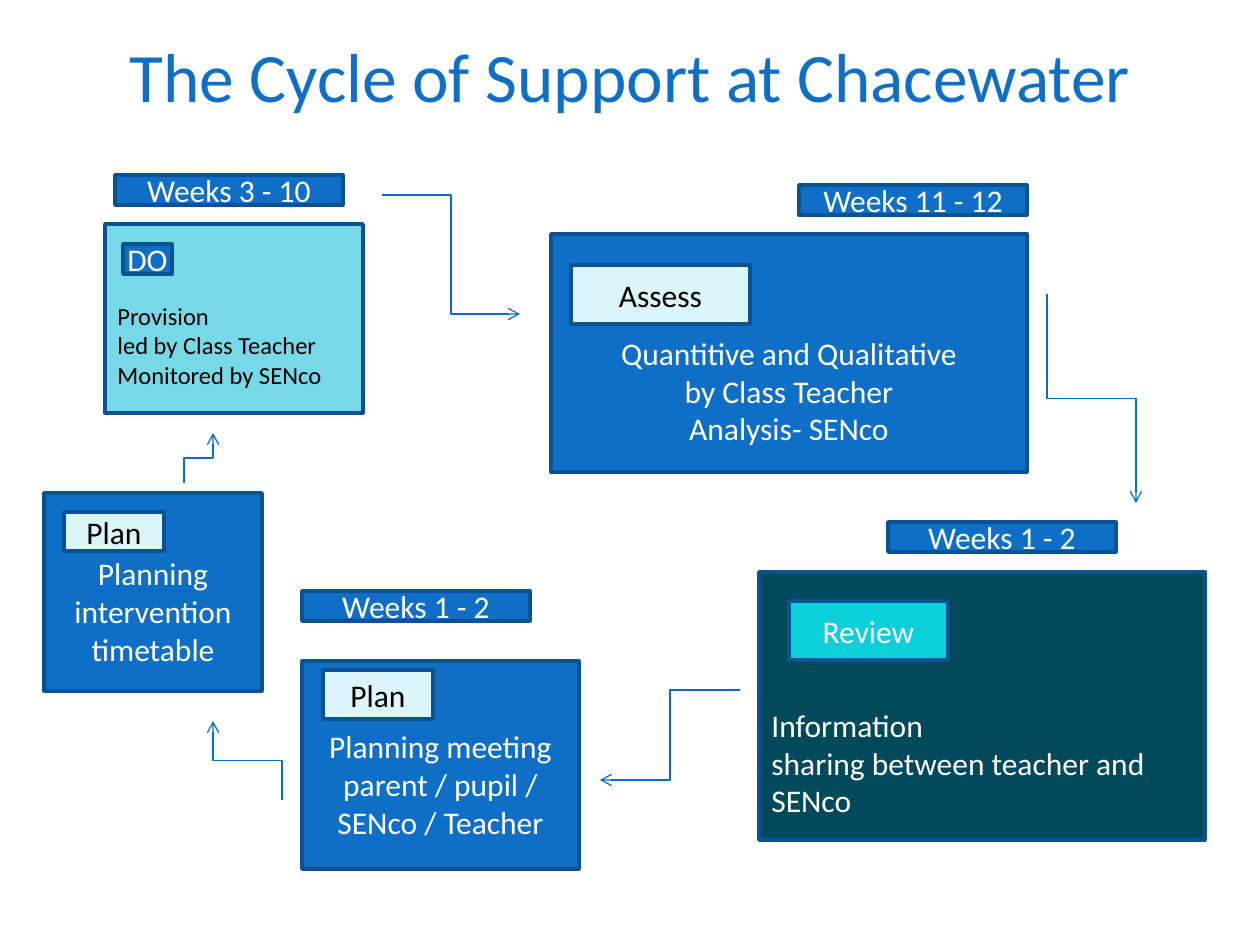
"""Build the Cycle of Support slide: cards, week labels and elbow arrows."""
from dataclasses import dataclass

from lxml import etree
from pptx import Presentation
from pptx.dml.color import RGBColor
from pptx.enum.shapes import MSO_CONNECTOR, MSO_SHAPE
from pptx.enum.text import MSO_ANCHOR, MSO_AUTO_SIZE, PP_ALIGN
from pptx.oxml.ns import qn
from pptx.util import Emu, Pt

RECTANGLE, ELBOW = MSO_SHAPE.RECTANGLE, MSO_CONNECTOR.ELBOW
LEFT, CENTER = PP_ALIGN.LEFT, PP_ALIGN.CENTER
TOP, MIDDLE = MSO_ANCHOR.TOP, MSO_ANCHOR.MIDDLE
NO_FIT = MSO_AUTO_SIZE.NONE
PX_PER_INCH = 126


@dataclass(frozen=True)
class Theme:
    """Colours, type sizes and line widths of the slide."""
    font: str = "Calibri"
    blue: str = "0F6FC6"
    edge: str = "0B5292"
    arrow: str = "0A6DC6"
    aqua: str = "77D9E8"
    pale: str = "DBF5F9"
    teal: str = "03495C"
    cyan: str = "0BD0D9"
    white: str = "FFFFFF"
    black: str = "000000"
    title_size: float = 39.6
    text_size: float = 18
    small_size: float = 14
    edge_width: float = 2
    arrow_width: float = 0.75


THEME = Theme()


@dataclass(frozen=True)
class Area:
    """A rectangle in px."""
    left: int
    top: int
    width: int
    height: int


@dataclass(frozen=True)
class Words:
    """Paragraphs with their formatting; top and bottom are insets in px."""
    paragraphs: tuple[str, ...]
    color: str = THEME.white
    size: float = THEME.text_size
    align: PP_ALIGN = CENTER
    anchor: MSO_ANCHOR = MIDDLE
    top: int = 6
    bottom: int = 6


@dataclass(frozen=True)
class Box:
    """A bordered rectangle with optional words."""
    area: Area
    fill: str = THEME.blue
    words: Words | None = None


@dataclass(frozen=True)
class Arrow:
    """An elbow arrow; a turn of 90 or 270 makes it leave vertically."""
    start: tuple[int, int]
    end: tuple[int, int]
    turn: int = 0


def px(length: float) -> Emu:
    """Turn px into EMU."""
    return Emu(round(length * 914400 / PX_PER_INCH))


def rgb(color: str) -> RGBColor:
    """Turn a hex string into a colour."""
    return RGBColor.from_string(color)


def place(shape, area: Area) -> None:
    """Move and size a shape."""
    shape.left, shape.top = px(area.left), px(area.top)
    shape.width, shape.height = px(area.width), px(area.height)


def write(shape, words: Words) -> None:
    """Fill a text frame run by run."""
    frame = shape.text_frame
    frame.word_wrap, frame.auto_size = True, NO_FIT
    frame.vertical_anchor = words.anchor
    frame.margin_top, frame.margin_bottom = px(words.top), px(words.bottom)
    for index, text in enumerate(words.paragraphs):
        para = frame.add_paragraph() if index else frame.paragraphs[0]
        para.alignment = words.align
        for number, line in enumerate(text.split("\n")):
            if number:
                para.add_line_break()
            span = para.add_run()
            span.text = line
            span.font.name, span.font.size = THEME.font, Pt(words.size)
            span.font.color.rgb = rgb(words.color)


def draw_box(slide, box: Box) -> None:
    """Draw a bordered rectangle."""
    shape = slide.shapes.add_shape(RECTANGLE, 0, 0, 0, 0)
    place(shape, box.area)
    shape.shadow.inherit = False
    shape.fill.solid()
    shape.fill.fore_color.rgb = rgb(box.fill)
    shape.line.color.rgb = rgb(THEME.edge)
    shape.line.width = Pt(THEME.edge_width)
    if box.words:
        write(shape, box.words)


def draw_text(slide, area: Area, words: Words) -> None:
    """Draw a plain text box."""
    shape = slide.shapes.add_textbox(0, 0, 0, 0)
    place(shape, area)
    write(shape, words)


def draw_arrow(slide, arrow: Arrow) -> None:
    """Draw an elbow arrow, turning its frame about its centre if needed."""
    (x1, y1), (x2, y2) = arrow.start, arrow.end
    if arrow.turn:
        sign = 1 if arrow.turn == 90 else -1
        mid_x, mid_y = (x1 + x2) / 2, (y1 + y2) / 2
        half_x, half_y = sign * (y2 - y1) / 2, sign * (x1 - x2) / 2
        x1, y1, x2, y2 = mid_x - half_x, mid_y - half_y, mid_x + half_x, mid_y + half_y
    connector = slide.shapes.add_connector(ELBOW, px(x1), px(y1), px(x2), px(y2))
    connector.line.color.rgb = rgb(THEME.arrow)
    connector.line.width = Pt(THEME.arrow_width)
    properties = connector._element.spPr
    if arrow.turn:
        properties.find(qn("a:xfrm")).set("rot", str(arrow.turn * 60000))
    etree.SubElement(properties.find(qn("a:ln")), qn("a:tailEnd"), type="arrow")
    etree.SubElement(properties, qn("a:effectLst"))


def tag(area: Area, text: str, fill: str = THEME.pale, color: str = THEME.black) -> Box:
    """Describe the stage name on a card."""
    return Box(area, fill, Words((text,), color))


def weeks(left: int, top: int, span: str) -> Box:
    """Describe a week label."""
    return Box(Area(left, top, 228, 30), words=Words((f"Weeks {span}",)))


BOXES = (
    Box(Area(105, 224, 258, 189), THEME.aqua),
    Box(Area(123, 244, 49, 30)),
    Box(Area(551, 234, 476, 238), words=Words(
        ("Quantitive and Qualitative", "by Class Teacher\nAnalysis- SENco"), top=81)),
    tag(Area(571, 265, 179, 59), "Assess"),
    Box(Area(759, 572, 446, 268), THEME.teal, Words(
        ("Information", "sharing between teacher and SENco"), align=LEFT, top=119)),
    tag(Area(789, 601, 159, 59), "Review", THEME.cyan, THEME.white),
    Box(Area(302, 661, 277, 208), words=Words(
        ("Planning meeting parent / pupil / SENco / Teacher",), top=44)),
    tag(Area(323, 670, 110, 49), "Plan"),
    Box(Area(44, 493, 218, 198), words=Words(
        ("Planning intervention timetable",), top=44)),
    tag(Area(64, 512, 100, 39), "Plan"),
    weeks(799, 185, "11 - 12"),
    weeks(888, 522, "1 - 2"),
    weeks(302, 591, "1 - 2"),
    weeks(115, 175, "3 - 10"),
)
TEXTS = (
    (Area(115, 234, 69, 50), Words(("DO",), align=LEFT, anchor=TOP)),
    (Area(105, 265, 258, 131), Words(
        ("Provision\nled by Class Teacher", "Monitored by SENco"),
        THEME.black, THEME.small_size, LEFT, TOP, top=36)),
)
ARROWS = (
    Arrow((382, 195), (520, 314)),
    Arrow((1047, 294), (1136, 503), 270),
    Arrow((740, 690), (600, 780)),
    Arrow((282, 800), (213, 721), 270),
    Arrow((184, 483), (213, 433), 90),
)


def main() -> None:
    """Build and save the deck."""
    deck = Presentation()
    deck.slide_width, deck.slide_height = px(1260), px(945)
    slide = deck.slides.add_slide(deck.slide_layouts[5])
    title = slide.shapes.title
    place(title, Area(63, 38, 1134, 157))
    write(title, Words(("The Cycle of Support at Chacewater",),
                       THEME.blue, THEME.title_size, bottom=90))
    for box in BOXES:
        draw_box(slide, box)
    for area, words in TEXTS:
        draw_text(slide, area, words)
    for arrow in ARROWS:
        draw_arrow(slide, arrow)
    deck.save("out.pptx")


if __name__ == "__main__":
    main()
